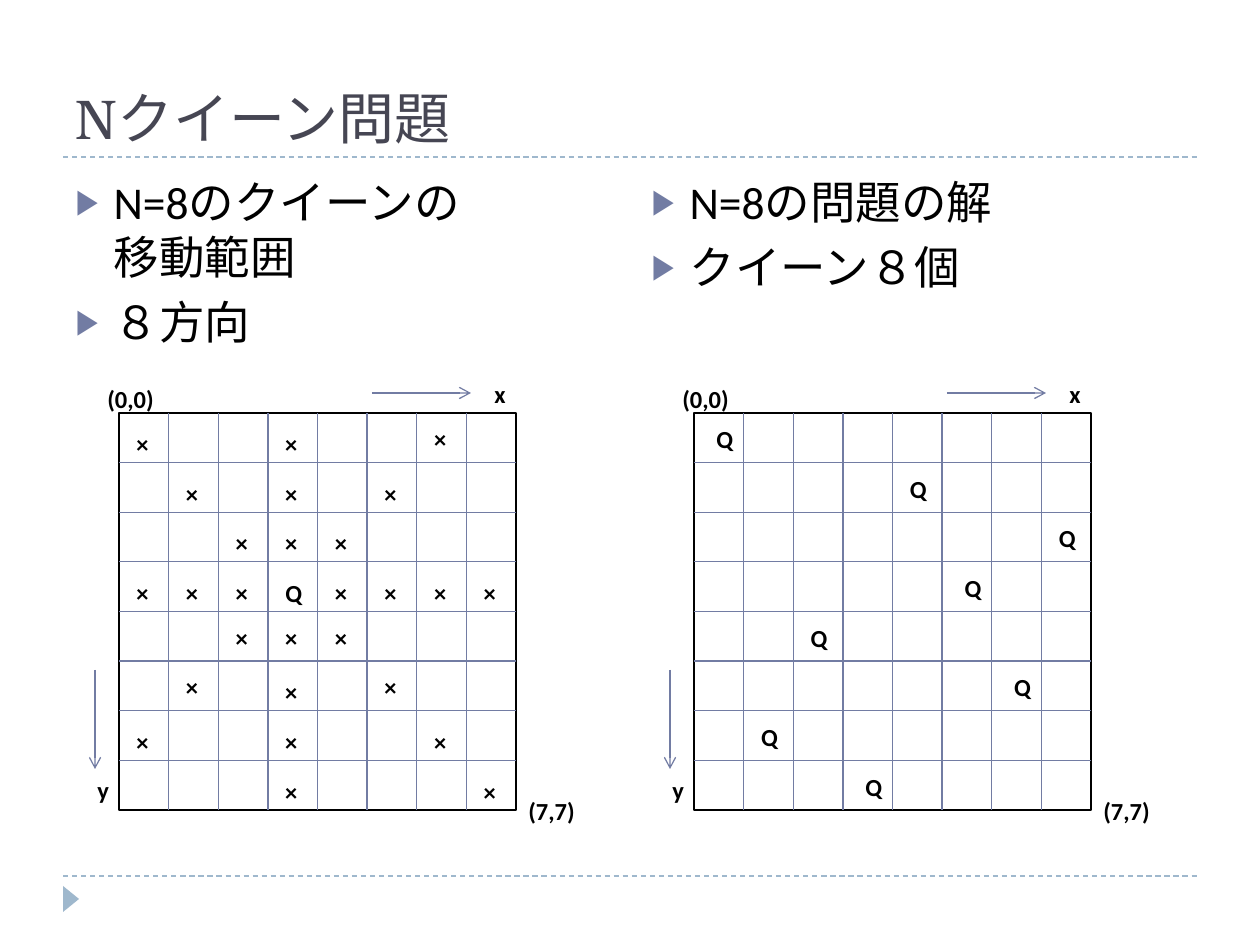
from collections import namedtuple
from itertools import product
from lxml.etree import SubElement
from pptx import Presentation
from pptx.dml.color import RGBColor as RGB
from pptx.enum.dml import MSO_LINE_DASH_STYLE as DASH
from pptx.enum.shapes import MSO_CONNECTOR as LINK, MSO_SHAPE as SHAPE
from pptx.enum.text import MSO_ANCHOR as ANCHOR, MSO_AUTO_SIZE as FIT, PP_ALIGN as ALIGN
from pptx.oxml.ns import qn
from pptx.util import Pt

Theme = namedtuple("Theme", "ink title blue pale serif sans head body mark thin thick")
theme = Theme(
    ink=RGB.from_string("000000"), title=RGB.from_string("464653"),
    blue=RGB.from_string("727CA3"), pale=RGB.from_string("9FB8CD"),
    serif="TeX Gyre Bonum", sans="Calibri",
    head=Pt(32), body=Pt(26), mark=Pt(14), thin=Pt(0.75), thick=Pt(1.5))
PX = 914400 / 126


def line(home, ends, color, dash=None, arrow=False):
    link = home.add_connector(LINK.STRAIGHT, *[round(n * PX) for n in ends])
    link.line.color.rgb = color
    link.line.width = theme.thin
    if dash:
        link.line.dash_style = dash
    if arrow:
        SubElement(link.line._get_or_add_ln(), qn("a:tailEnd"), type="arrow")
    SubElement(link._element.spPr, qn("a:effectLst"))
    return link


def label(home, text, left, top, wide):
    box = home.add_textbox(*[round(n * PX) for n in (left, top, wide, 43)])
    frame = box.text_frame
    frame.word_wrap = False
    frame.auto_size = FIT.SHAPE_TO_FIT_TEXT
    frame.text = text
    font = frame.paragraphs[0].font
    font.name, font.size, font.bold = theme.sans, theme.mark, True
    font.color.rgb = theme.ink


deck = Presentation()
deck.slide_width = round(1260 * PX)
deck.slide_height = round(945 * PX)
slide = deck.slides.add_slide(deck.slide_layouts[3])
shapes = slide.shapes

for y in (876, 157):
    line(shapes, (63, y, 1197, y), theme.pale, dash=DASH.DASH)
wedge = shapes.add_shape(SHAPE.ISOSCELES_TRIANGLE, *[round(n * PX) for n in (58, 891, 26, 16)])
wedge.rotation = 90
wedge.shadow.inherit = False
wedge.fill.solid()
wedge.fill.fore_color.rgb = theme.pale
wedge.line.fill.background()

title = shapes.title
title.left, title.top, title.width, title.height = [round(n * PX) for n in (63, 31, 1134, 126)]
title.text_frame.text = "Nクイーン問題"
title.text_frame.vertical_anchor = ANCHOR.BOTTOM
title.text_frame.auto_size = FIT.NONE
para = title.text_frame.paragraphs[0]
para.alignment = ALIGN.LEFT
para.font.name, para.font.size = theme.serif, theme.head
para.font.color.rgb = theme.title

lists = [
    (1, 63, ["N=8のクイーンの\v移動範囲", "８方向"]),
    (2, 639, ["N=8の問題の解", "クイーン８個"]),
]
for slot, left, items in lists:
    body = slide.placeholders[slot]
    body.left, body.top, body.width, body.height = [round(n * PX) for n in (left, 168, 557, 680)]
    frame = body.text_frame
    frame.text = "\n".join(items)
    frame.auto_size = FIT.NONE
    for para in frame.paragraphs:
        para.space_before = Pt(6)
        props = para._p.get_or_add_pPr()
        props.set("marL", str(round(38 * PX)))
        props.set("indent", str(round(-38 * PX)))
        tint = SubElement(props, qn("a:buClr"))
        SubElement(tint, qn("a:srgbClr"), val=str(theme.blue))
        SubElement(props, qn("a:buSzPct"), val="76000")
        SubElement(props, qn("a:buChar"), char="▶")
        para.font.name, para.font.size = theme.sans, theme.body
        para.font.color.rgb = theme.ink

SIDE, COUNT, TOP = 397, 8, 413
CELL = SIDE / COUNT

home_row = home_col = 3
raised = {(0, 6), (5, 1), (5, 5)}
moves = []
for row, col in product(range(COUNT), repeat=2):
    down, over = row - home_row, col - home_col
    if down == over == 0:
        moves.append(("Q", row, col, 5, 10, 43))
    elif down == 0 or over == 0 or abs(down) == abs(over):
        lift = 5 if row == 4 or (row, col) in raised else 10
        moves.append(("×", row, col, 5, lift, 50))

spots = [(0, 10), (4, 5), (7, 5), (5, 10), (2, 5), (6, 10), (1, 5), (3, 10)]
solved = [("Q", row, col, shift, 5, 43) for row, (col, shift) in enumerate(spots)]

for left, marks in ((119, moves), (694, solved)):
    board = shapes.add_group_shape().shapes
    frame = board.add_shape(SHAPE.RECTANGLE, *[round(n * PX) for n in (left, TOP, SIDE, SIDE)])
    frame.shadow.inherit = False
    frame.fill.background()
    frame.line.color.rgb = theme.ink
    frame.line.width = theme.thick
    for step in range(1, COUNT):
        x, y = left + step * CELL, TOP + step * CELL
        across = line(board, (left, y, left + SIDE, y), theme.blue)
        upright = line(board, (x, TOP, x, TOP + SIDE), theme.blue)
        if step == COUNT // 2:
            across.begin_connect(frame, 1)
            across.end_connect(frame, 3)
            upright.begin_connect(frame, 0)
            upright.end_connect(frame, 2)
    line(board, (left + 253, TOP - 20, left + 352, TOP - 20), theme.blue, arrow=True)
    line(board, (left - 24, TOP + 257, left - 24, TOP + 356), theme.blue, arrow=True)
    for text, x, y, wide in (("x", 363, -40, 37), ("y", -34, 356, 37),
                             ("(0,0)", -24, -35, 73), ("(7,7)", SIDE, 377, 73)):
        label(board, text, left + x, TOP + y, wide)
    for text, row, col, shift, drop, wide in marks:
        label(board, text, left + col * CELL + shift, TOP + row * CELL + drop, wide)

deck.save("out.pptx")
